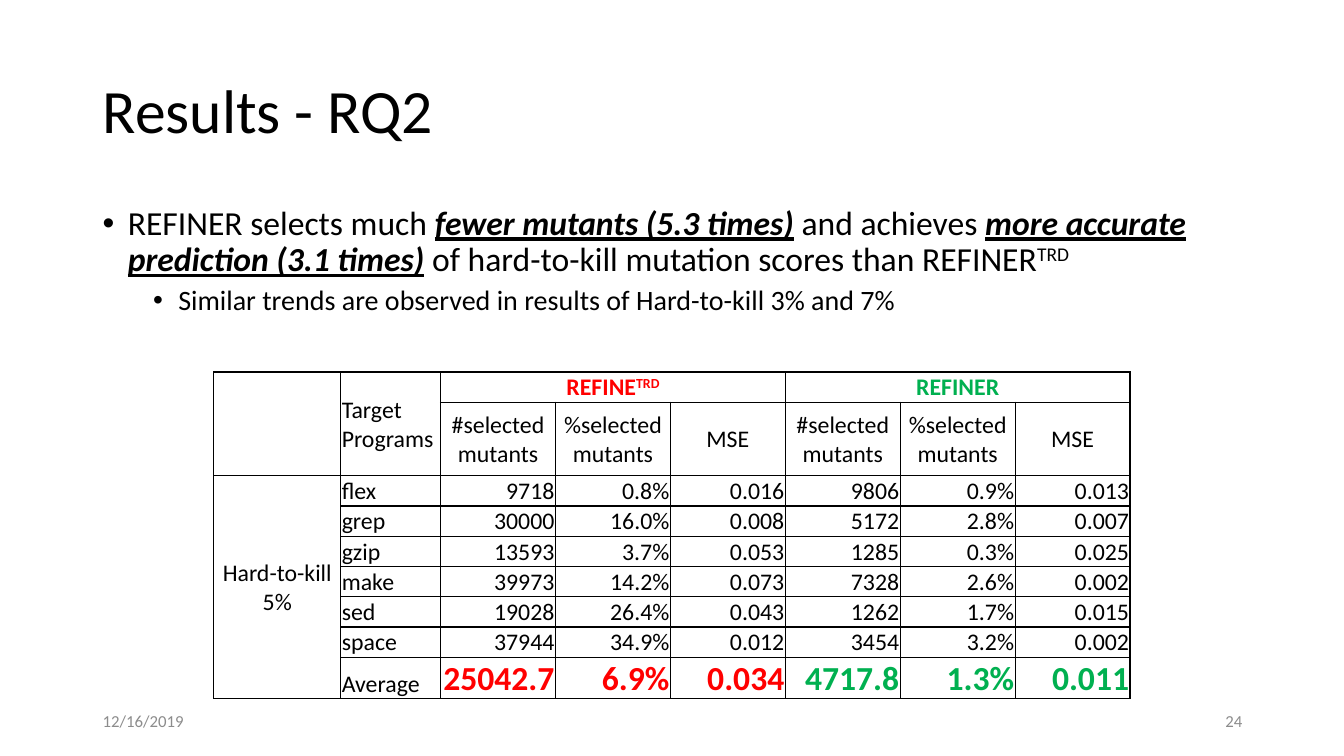
from lxml import etree
from pptx import Presentation
from pptx.dml.color import RGBColor
from pptx.enum import text as t
from pptx.oxml.ns import qn
from pptx.util import Inches, Pt

BLACK, GREY, RED, GREEN = "000000", "8C8C8C", "FF0000", "00B050"
LEFT, CENTER, RIGHT = t.PP_ALIGN.LEFT, t.PP_ALIGN.CENTER, t.PP_ALIGN.RIGHT
MIDDLE, BOTTOM = t.MSO_ANCHOR.MIDDLE, t.MSO_ANCHOR.BOTTOM

COLUMN_WIDTHS = [1.26, 0.99] + [1.14] * 6
ROW_HEIGHTS = [0.3, 0.73] + [0.3] * 6 + [0.37]
MEASURES = ["#selected mutants", "%selected mutants", "MSE"]
PROGRAM_RESULTS = [
    ["flex", "9718", "0.8%", "0.016", "9806", "0.9%", "0.013"],
    ["grep", "30000", "16.0%", "0.008", "5172", "2.8%", "0.007"],
    ["gzip", "13593", "3.7%", "0.053", "1285", "0.3%", "0.025"],
    ["make", "39973", "14.2%", "0.073", "7328", "2.6%", "0.002"],
    ["sed", "19028", "26.4%", "0.043", "1262", "1.7%", "0.015"],
    ["space", "37944", "34.9%", "0.012", "3454", "3.2%", "0.002"],
    ["Average", "25042.7", "6.9%", "0.034", "4717.8", "1.3%", "0.011"],
]


def rgb(color):
    return RGBColor.from_string(color)


def write(paragraph, pieces, size, color=BLACK, align=LEFT, bold=False):
    """Fill a paragraph from (text, style) pieces; style is "", "strong" or "super"."""
    paragraph.alignment = align
    font = paragraph.font
    font.name, font.size, font.bold = "Calibri", Pt(size), bold
    font.color.rgb = rgb(color)
    for words, style in pieces:
        run = paragraph.add_run()
        run.text = words
        if style == "strong":
            run.font.bold = run.font.italic = run.font.underline = True
        elif style == "super":
            run._r.get_or_add_rPr().set("baseline", "30000")


def add_text_frame(slide, left, top, width, height, anchor=MIDDLE):
    frame = slide.shapes.add_textbox(
        Inches(left), Inches(top), Inches(width), Inches(height)).text_frame
    frame.word_wrap = True
    frame.vertical_anchor = anchor
    return frame


def add_line(slide, words, box, size, color=BLACK, align=LEFT):
    paragraph = add_text_frame(slide, *box).paragraphs[0]
    write(paragraph, [(words, "")], size, color, align)
    return paragraph


def write_bullet(paragraph, pieces, size, indent, space_before):
    properties = paragraph._p.get_or_add_pPr()
    properties.set("marL", str(Inches(indent)))
    properties.set("indent", str(Inches(-0.25)))
    etree.SubElement(properties, qn("a:buFont"), typeface="Arial")
    etree.SubElement(properties, qn("a:buChar"), char="•")
    paragraph.line_spacing = 0.9
    paragraph.space_before = Pt(space_before)
    write(paragraph, pieces, size)


def add_findings(slide):
    frame = add_text_frame(slide, 0.92, 2, 11.5, 2.27, t.MSO_ANCHOR.TOP)
    write_bullet(frame.paragraphs[0], [
        ("REFINER selects much ", ""),
        ("fewer mutants (5.3 times)", "strong"),
        (" and achieves ", ""),
        ("more accurate prediction (3.1 times)", "strong"),
        (" of hard-to-kill mutation scores than REFINER", ""),
        ("TRD", "super"),
    ], 24, 0.25, 10)
    trend = frame.add_paragraph()
    trend.level = 1
    write_bullet(trend, [
        ("Similar trends are observed in results of Hard-to-kill 3% and 7%", ""),
    ], 20, 0.75, 5)


def style_cell(cell):
    cell.margin_left = cell.margin_right = cell.margin_top = Inches(0.01)
    cell.margin_bottom = 0
    cell.fill.background()
    properties = cell._tc.get_or_add_tcPr()
    for position, side in enumerate(["a:lnL", "a:lnR", "a:lnT", "a:lnB"]):
        border = etree.Element(qn(side), w=str(Pt(1)))
        fill = etree.SubElement(border, qn("a:solidFill"))
        etree.SubElement(fill, qn("a:srgbClr"), val=BLACK)
        properties.insert(position, border)


def write_cell(cell, pieces, align, anchor, size=17, color=BLACK, bold=False):
    cell.vertical_anchor = anchor
    write(cell.text_frame.paragraphs[0], pieces, size, color, align, bold)


def add_results_table(slide):
    table = slide.shapes.add_table(
        len(ROW_HEIGHTS), len(COLUMN_WIDTHS), Inches(2.12), Inches(3.69),
        Inches(sum(COLUMN_WIDTHS)), Inches(sum(ROW_HEIGHTS))).table
    table.first_row = table.horz_banding = False
    for column, width in zip(table.columns, COLUMN_WIDTHS):
        column.width = Inches(width)
    for row, height in zip(table.rows, ROW_HEIGHTS):
        row.height = Inches(height)
    for cell in table.iter_cells():
        style_cell(cell)
    for first, last in [((0, 0), (1, 0)), ((0, 1), (1, 1)), ((0, 2), (0, 4)),
                        ((0, 5), (0, 7)), ((2, 0), (8, 0))]:
        table.cell(*first).merge(table.cell(*last))

    write_cell(table.cell(0, 1), [("Target Programs", "")], LEFT, MIDDLE)
    write_cell(table.cell(0, 2), [("REFINE", ""), ("TRD", "super")],
               CENTER, BOTTOM, color=RED, bold=True)
    write_cell(table.cell(0, 5), [("REFINER", "")],
               CENTER, BOTTOM, color=GREEN, bold=True)
    write_cell(table.cell(2, 0), [("Hard-to-kill 5%", "")], CENTER, MIDDLE)
    for column, measure in enumerate(MEASURES * 2, start=2):
        write_cell(table.cell(1, column), [(measure, "")], CENTER, MIDDLE)

    for row, (program, *values) in enumerate(PROGRAM_RESULTS, start=2):
        write_cell(table.cell(row, 1), [(program, "")], LEFT, BOTTOM)
        for column, value in enumerate(values, start=2):
            emphasis = {}
            if program == "Average":
                emphasis = {"size": 24, "color": RED if column < 5 else GREEN,
                            "bold": True}
            write_cell(table.cell(row, column), [(value, "")], RIGHT, BOTTOM,
                       **emphasis)


def main():
    deck = Presentation()
    deck.slide_width, deck.slide_height = Inches(13.33), Inches(7.5)
    slide = deck.slides.add_slide(deck.slide_layouts[6])
    title = add_line(slide, "Results - RQ2", (0.92, 0.4, 11.5, 1.45), 44)
    title.line_spacing = 0.9
    add_results_table(slide)
    add_line(slide, "12/16/2019", (0.92, 6.95, 3, 0.4), 12, GREY)
    add_line(slide, "24", (9.42, 6.95, 3, 0.4), 12, GREY, RIGHT)
    add_findings(slide)
    deck.save("out.pptx")


if __name__ == "__main__":
    main()
